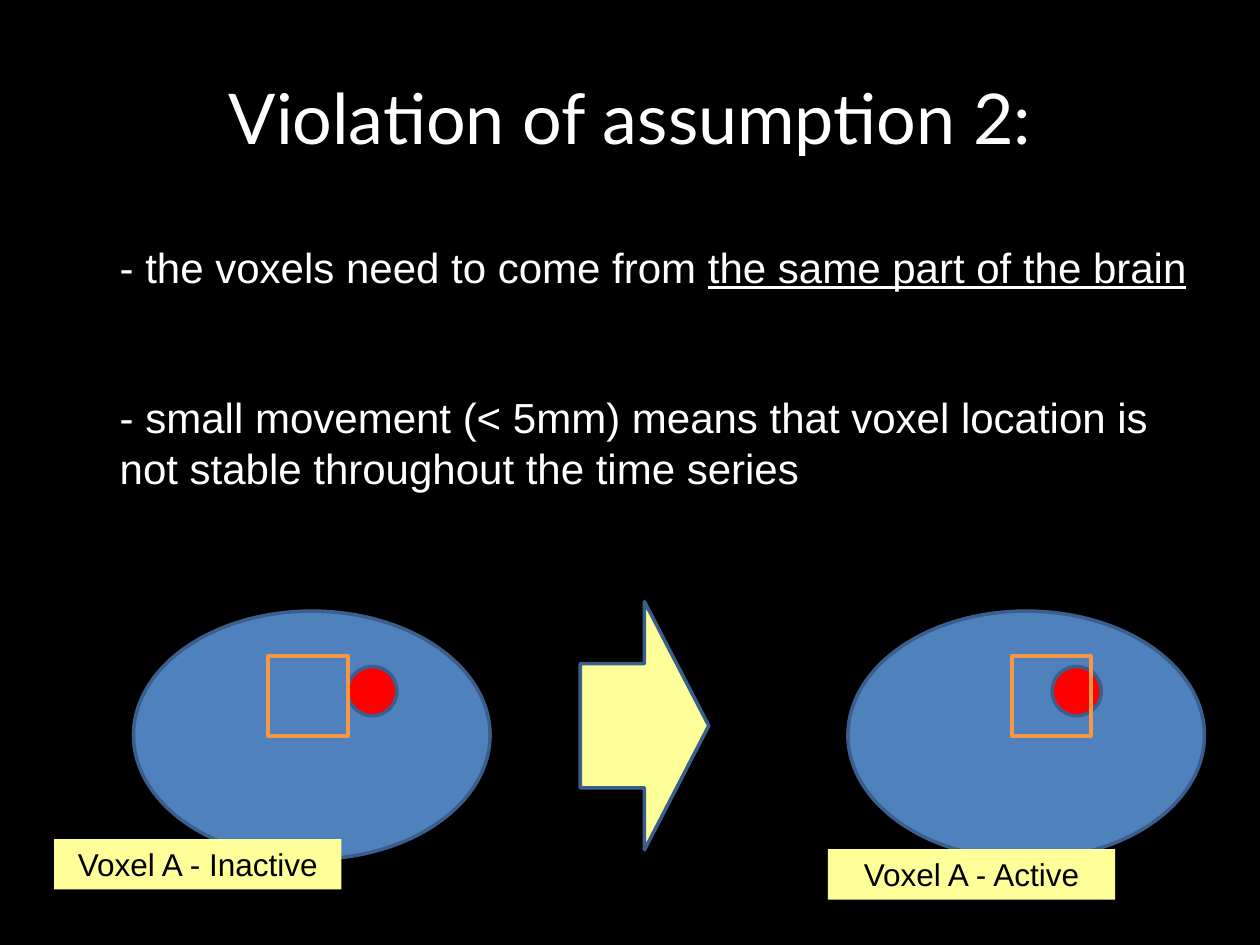
"""Build the slide on voxel location and small head movement."""
from lxml.etree import SubElement
from pptx import Presentation
from pptx.dml.color import RGBColor
from pptx.enum.shapes import MSO_SHAPE
from pptx.enum.text import MSO_ANCHOR, MSO_AUTO_SIZE, PP_ALIGN
from pptx.oxml.ns import qn
from pptx.util import Inches, Pt

BLACK = RGBColor(0x00, 0x00, 0x00)
WHITE = RGBColor(0xFF, 0xFF, 0xFF)
BLUE = RGBColor(0x4F, 0x81, 0xBD)
DARK_BLUE = RGBColor(0x3A, 0x5F, 0x8C)
RED = RGBColor(0xFF, 0x00, 0x00)
ORANGE = RGBColor(0xF7, 0x96, 0x46)
YELLOW = RGBColor(0xFF, 0xFF, 0x99)


def add_figure(shapes, preset, box, fill=None, line=None, weight=2):
    figure = shapes.add_shape(preset, *[Inches(length) for length in box])
    figure.shadow.inherit = False
    if fill is None:
        figure.fill.background()
    else:
        figure.fill.solid()
        figure.fill.fore_color.rgb = fill
    if line is None:
        figure.line.fill.background()
    else:
        figure.line.color.rgb = line
        figure.line.width = Pt(weight)
    return figure


def add_run(paragraph, text, size, color, font="Arial", underline=False):
    run = paragraph.add_run()
    run.text = text
    run.font.name = font
    run.font.size = Pt(size)
    run.font.color.rgb = color
    run.font.underline = underline


presentation = Presentation()
presentation.slide_width = Inches(10)
presentation.slide_height = Inches(7.5)
slide = presentation.slides.add_slide(presentation.slide_layouts[1])
slide.background.fill.solid()
slide.background.fill.fore_color.rgb = BLACK

heading = slide.shapes.title
heading.left, heading.top = Inches(0.5), Inches(0.3)
heading.width, heading.height = Inches(9), Inches(1.25)
heading.text_frame.vertical_anchor = MSO_ANCHOR.MIDDLE
heading.text_frame.paragraphs[0].alignment = PP_ALIGN.CENTER
add_run(heading.text_frame.paragraphs[0], "Violation of assumption 2:", 40, WHITE, "Lato")

points = slide.placeholders[1]
points.left, points.top = Inches(0.35), Inches(1.86)
points.width, points.height = Inches(9.21), Inches(3)
points.text_frame.auto_size = MSO_AUTO_SIZE.NONE
requirement = points.text_frame.paragraphs[0]
movement = points.text_frame.add_paragraph()
for point, gap in ((requirement, 0), (movement, 57)):
    point.level = 1
    point.line_spacing = Pt(29)
    point.space_before = Pt(gap)
    properties = point._p.get_or_add_pPr()
    properties.set("marL", str(Inches(0.5)))
    properties.set("indent", "0")
    SubElement(properties, qn("a:buNone"))
add_run(requirement, "- the voxels need to come from ", 24, WHITE)
add_run(requirement, "the same part of the brain", 24, WHITE, underline=True)
add_run(
    movement,
    "- small movement (< 5mm) means that voxel location is not stable throughout the time series",
    24,
    WHITE,
)

for brain_left, active_left, voxel_left in ((1.06, 2.76, 2.13), (6.73, 8.35, 8.03)):
    brain = slide.shapes.add_group_shape().shapes
    add_figure(brain, MSO_SHAPE.OVAL, (brain_left, 4.85, 2.83, 1.97), BLUE, DARK_BLUE)
    add_figure(brain, MSO_SHAPE.OVAL, (active_left, 5.29, 0.39, 0.39), RED, DARK_BLUE)
    add_figure(brain, MSO_SHAPE.RECTANGLE, (voxel_left, 5.21, 0.63, 0.63), line=ORANGE, weight=2.25)

shift = add_figure(slide.shapes, MSO_SHAPE.DOWN_ARROW, (4.13, 5.25, 1.97, 1.02), YELLOW, DARK_BLUE)
shift.rotation = 270

for state, left, top in (("Inactive", 0.43, 6.66), ("Active", 6.57, 6.74)):
    label = add_figure(slide.shapes, MSO_SHAPE.RECTANGLE, (left, top, 2.28, 0.4), YELLOW)
    label.text_frame.word_wrap = True
    label.text_frame.vertical_anchor = MSO_ANCHOR.TOP
    label.text_frame.paragraphs[0].alignment = PP_ALIGN.CENTER
    add_run(label.text_frame.paragraphs[0], f"Voxel A - {state}", 18, BLACK)

presentation.save("out.pptx")
